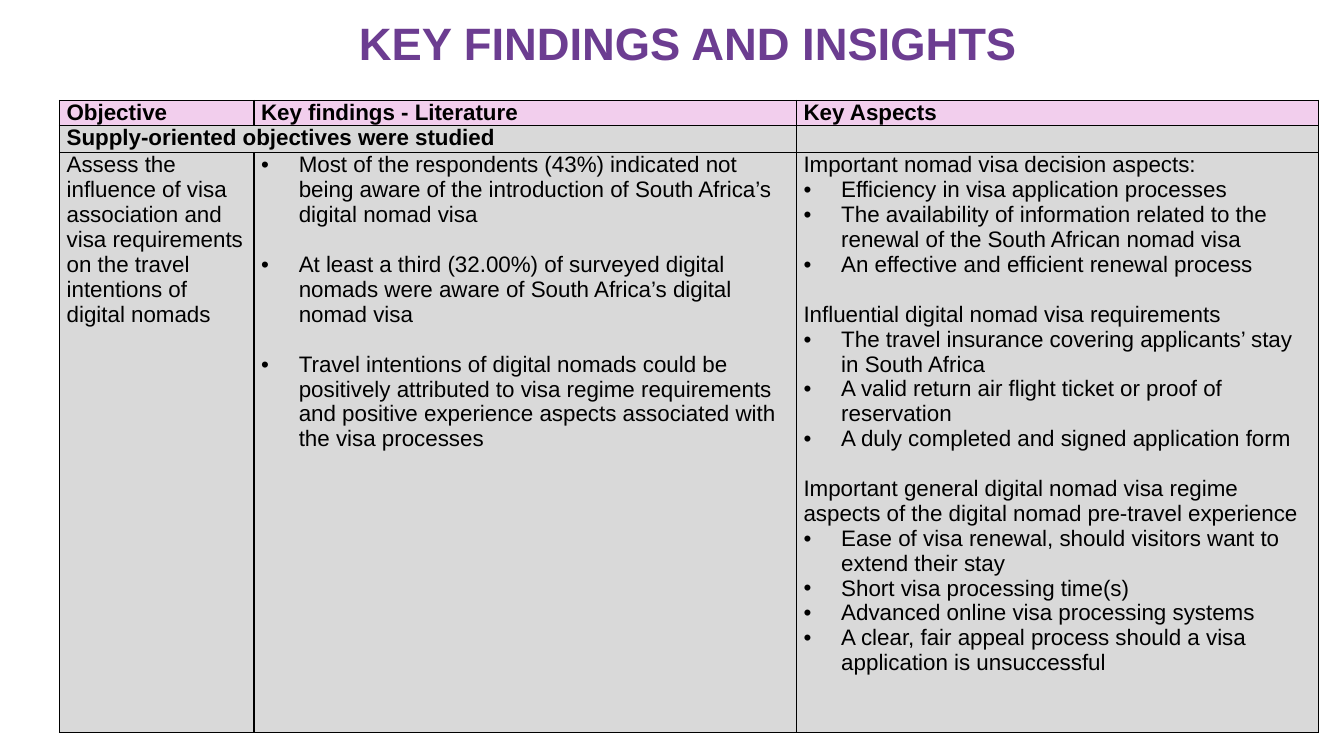
"""Build the key findings and insights slide."""
from lxml import etree
from pptx import Presentation
from pptx.dml.color import RGBColor
from pptx.enum import text
from pptx.oxml import ns
from pptx.util import Cm, Pt

TITLE = "KEY FINDINGS AND INSIGHTS"
HEADINGS = ["Objective", "Key findings - Literature", "Key Aspects"]
SECTION = "Supply-oriented objectives were studied"
OBJECTIVE = ("Assess the influence of visa association and visa requirements "
             "on the travel intentions of digital nomads")
FINDINGS = [
    "Most of the respondents (43%) indicated not being aware of the introduction "
    "of South Africa’s digital nomad visa",
    "At least a third (32.00%) of surveyed digital nomads were aware of "
    "South Africa’s digital nomad visa",
    "Travel intentions of digital nomads could be positively attributed to visa regime "
    "requirements and positive experience aspects associated with the visa processes",
]
ASPECTS = {
    "Important nomad visa decision aspects:": [
        "Efficiency in visa application processes",
        "The availability of information related to the renewal of the South African nomad visa",
        "An effective and efficient renewal process",
    ],
    "Influential digital nomad visa requirements": [
        "The travel insurance covering applicants’ stay in South Africa",
        "A valid return air flight ticket or proof of reservation",
        "A duly completed and signed application form",
    ],
    "Important general digital nomad visa regime aspects of the digital nomad "
    "pre-travel experience": [
        "Ease of visa renewal, should visitors want to extend their stay",
        "Short visa processing time(s)",
        "Advanced online visa processing systems",
        "A clear, fair appeal process should a visa application is unsuccessful",
    ],
}
COLUMN_WIDTHS = [4.9, 13.67, 13.16]
ROW_HEIGHTS = [0.63, 0.69, 14.6]
FONT, SIZE, GAP, INDENT = "Arial", 16, 17.8, 0.95
PURPLE, PINK, GREY, BLACK = "6C3D91", "F2CEED", "D9D9D9", "000000"


def colour(value):
    """Turn a hex string into a colour."""
    return RGBColor.from_string(value)


def add_span(para, words, size=SIZE, bold=False, ink=BLACK):
    """Add one formatted run."""
    span = para.add_run()
    span.text = words
    span.font.name, span.font.size, span.font.bold = FONT, Pt(size), bold
    span.font.color.rgb = colour(ink)


def style_cell(cell, fill):
    """Set the fill, margins and thin black borders of a cell."""
    cell.fill.solid()
    cell.fill.fore_color.rgb = colour(fill)
    cell.margin_left = cell.margin_right = Cm(0.18)
    cell.margin_top = cell.margin_bottom = 0
    properties = cell._tc.get_or_add_tcPr()
    for index, side in enumerate(("lnL", "lnR", "lnT", "lnB")):
        line = etree.Element(ns.qn(f"a:{side}"), w=str(Pt(1)))
        solid = etree.SubElement(line, ns.qn("a:solidFill"))
        etree.SubElement(solid, ns.qn("a:srgbClr"), val=BLACK)
        properties.insert(index, line)


def fill_cell(cell, lines, bold=False):
    """Write (words, bulleted, gap before) lines into a cell."""
    for index, (words, bulleted, gap) in enumerate(lines):
        frame = cell.text_frame
        para = frame.add_paragraph() if index else frame.paragraphs[0]
        if bulleted:
            properties = para._p.get_or_add_pPr()
            properties.set("marL", str(Cm(INDENT)))
            properties.set("indent", str(-Cm(INDENT)))
            etree.SubElement(properties, ns.qn("a:buFont"), typeface=FONT)
            etree.SubElement(properties, ns.qn("a:buChar"), char="•")
        if gap:
            para.space_before = Pt(GAP)
        add_span(para, words, bold=bold)


def add_title(page):
    """Place and format the title."""
    title = page.shapes.title
    title.left, title.top, title.width, title.height = Cm(4.29), Cm(0.48), Cm(26.09), Cm(1.35)
    frame = title.text_frame
    frame.word_wrap = True
    frame.auto_size = text.MSO_AUTO_SIZE.NONE
    frame.vertical_anchor = text.MSO_ANCHOR.MIDDLE
    para = frame.paragraphs[0]
    para.alignment = text.PP_ALIGN.CENTER
    para.line_spacing = 0.9
    add_span(para, TITLE, 32.4, True, PURPLE)


def add_findings(page):
    """Add the findings table."""
    table = page.shapes.add_table(
        len(ROW_HEIGHTS), len(COLUMN_WIDTHS), Cm(1.5), Cm(2.53),
        Cm(sum(COLUMN_WIDTHS)), Cm(sum(ROW_HEIGHTS))).table
    table.first_row = table.horz_banding = False
    for column, width in zip(table.columns, COLUMN_WIDTHS):
        column.width = Cm(width)
    for row, height, fill in zip(table.rows, ROW_HEIGHTS, (PINK, GREY, GREY)):
        row.height = Cm(height)
        for cell in row.cells:
            style_cell(cell, fill)
    for index, heading in enumerate(HEADINGS):
        fill_cell(table.cell(0, index), [(heading, False, False)], True)
    table.cell(1, 0).merge(table.cell(1, 1))
    fill_cell(table.cell(1, 0), [(SECTION, False, False)], True)
    blank = table.cell(1, 2).text_frame.paragraphs[0]
    etree.SubElement(blank._p, ns.qn("a:endParaRPr"), sz=str(SIZE * 100))
    aspects = []
    for heading, points in ASPECTS.items():
        aspects.append((heading, False, bool(aspects)))
        aspects += [(point, True, False) for point in points]
    findings = [(words, True, index > 0) for index, words in enumerate(FINDINGS)]
    for index, lines in enumerate(([(OBJECTIVE, False, False)], findings, aspects)):
        fill_cell(table.cell(2, index), lines)


def main():
    """Create and save the deck."""
    deck = Presentation()
    deck.slide_width, deck.slide_height = Cm(33.87), Cm(19.05)
    page = deck.slides.add_slide(deck.slide_layouts[5])
    add_title(page)
    add_findings(page)
    deck.save("out.pptx")


if __name__ == "__main__":
    main()
